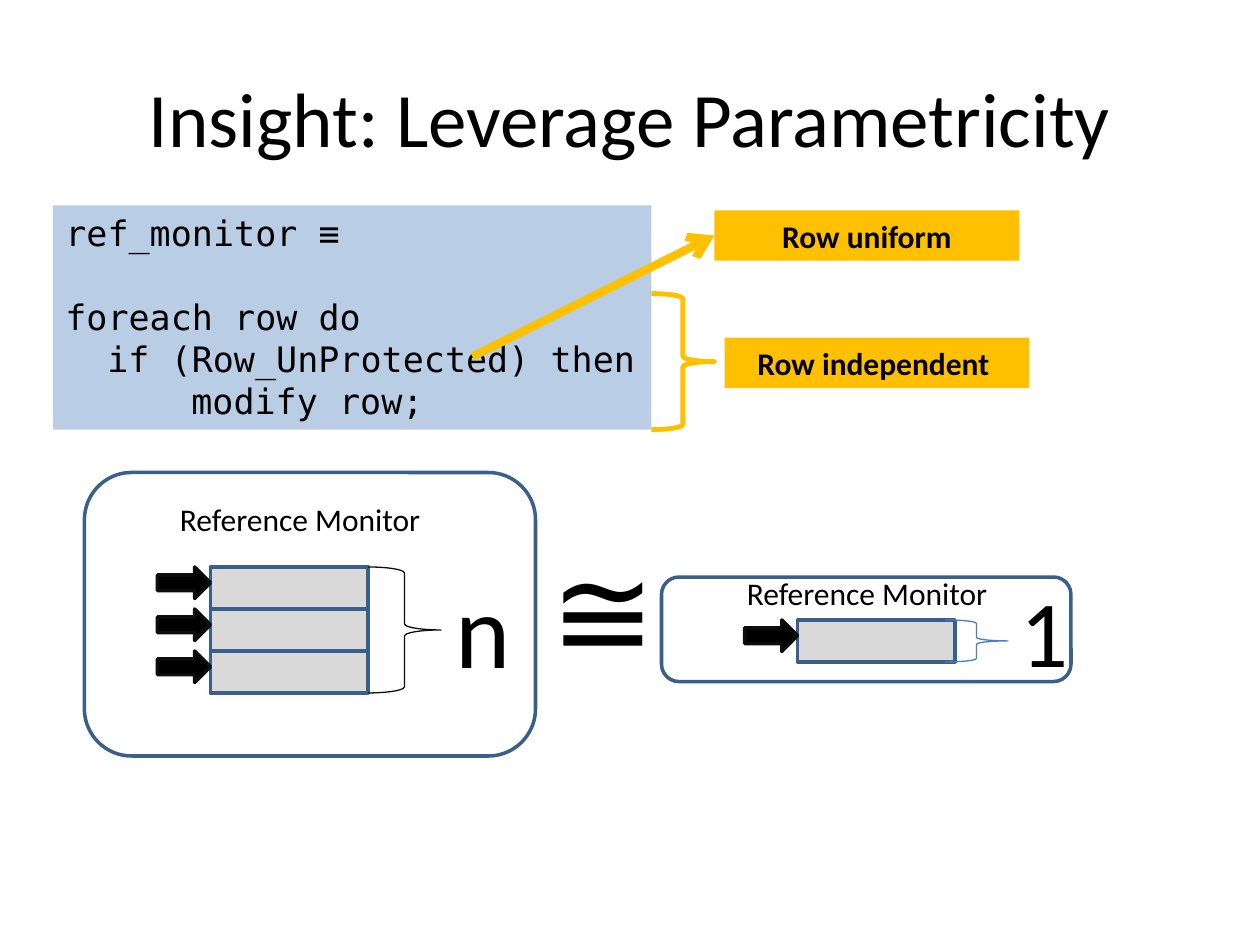
import pptx
import pptx.util
import pptx.dml.color
import pptx.enum.shapes
import pptx.enum.text
import pptx.oxml.ns
from lxml import etree

Inches = pptx.util.Inches
Pt = pptx.util.Pt
KIND = pptx.enum.shapes.MSO_SHAPE
ALIGN = pptx.enum.text.PP_ALIGN
ANCHOR = pptx.enum.text.MSO_ANCHOR
INK, EDGE, GOLD, GREY = "000000", "3A5F8C", "FFC000", "D9D9D9"
ROW = 1 / 3


def tint(code):
    """Turn a hex string into a colour."""
    return pptx.dml.color.RGBColor.from_string(code)


def shape(slide, kind, box, fill=None, line=None, width=2):
    """Add a preset shape with the given fill and outline."""
    item = slide.shapes.add_shape(kind, *map(Inches, box))
    item.shadow.inherit = False
    if fill:
        item.fill.solid()
        item.fill.fore_color.rgb = tint(fill)
    else:
        item.fill.background()
    if line:
        item.line.color.rgb = tint(line)
        item.line.width = Pt(width)
    else:
        item.line.fill.background()
    return item


def write(item, lines, size, name="Calibri", bold=False, align=ALIGN.CENTER, anchor=ANCHOR.TOP):
    """Fill an item with one paragraph per line."""
    frame = item.text_frame
    for key, value in {"word_wrap": True, "vertical_anchor": anchor}.items():
        setattr(frame, key, value)
    looks = {"name": name, "size": Pt(size), "bold": bold}
    for spot, line in enumerate(lines):
        para = frame.paragraphs[0] if spot == 0 else frame.add_paragraph()
        para.alignment = align
        run = para.add_run()
        run.text = line
        for key, value in looks.items():
            setattr(run.font, key, value)
        run.font.color.rgb = tint(INK)
    return frame


def label(slide, box, words, size, **form):
    """Add a text box with one line."""
    item = slide.shapes.add_textbox(*map(Inches, box))
    return write(item, [words], size, **form)


def code(slide, box):
    """Draw the code panel, indented by whole characters."""
    size = 20
    lines = ["ref_monitor ≡", "foreach row do", "if (Row_UnProtected) then", "modify row;"]
    item = shape(slide, KIND.RECTANGLE, box, fill="B9CDE5")
    frame = write(item, lines, size, name="DejaVu Sans Mono", align=ALIGN.LEFT)
    for para, chars in zip(frame.paragraphs, (0, 0, 2, 6)):
        props = para._p.get_or_add_pPr()
        props.set("marL", str(Pt(0.6 * size * chars)))
        props.set("indent", "0")
    frame.paragraphs[1].space_before = Pt(1.2 * size)


def badge(slide, left, top, words):
    """Draw a gold label."""
    item = shape(slide, KIND.RECTANGLE, (left, top, 2.42, 0.4), fill=GOLD)
    write(item, [words], 18, bold=True)
    return item


def notes(slide, left, top):
    """Draw the two gold remarks beside the code."""
    shape(slide, KIND.RIGHT_BRACE, (left, top + 0.7, 0.5, 1.08), line=GOLD, width=2.75)
    badge(slide, left + 0.58, top + 1.05, "Row independent ")
    goal = badge(slide, left + 0.5, top + 0.04, "Row uniform")
    ends = map(Inches, (left - 1.42, top + 1.2, left + 0.5, top + 0.24))
    link = slide.shapes.add_connector(pptx.enum.shapes.MSO_CONNECTOR.STRAIGHT, *ends)
    link.end_connect(goal, 1)
    link.line.color.rgb = tint(GOLD)
    link.line.width = Pt(4.75)
    tag = pptx.oxml.ns.qn
    etree.SubElement(link.line._get_or_add_ln(), tag("a:tailEnd"), type="arrow")
    etree.SubElement(link._element.spPr, tag("a:effectLst"))


def monitor(slide, box, title, rows, count, brace, hue, sign, size, words):
    """Draw a reference monitor; inner places are relative to its box."""
    left, top, _, _ = box

    def at(part):
        return left + part[0], top + part[1], part[2], part[3]

    x, y = at((*rows, 0, 0))[:2]
    for step in range(count):
        down = y + step * ROW
        shape(slide, KIND.RECTANGLE, (x, down, 1.25, ROW), GREY, EDGE)
        shape(slide, KIND.RIGHT_ARROW, (x - 0.42, down, 0.42, 0.25), INK, "0D0D0D")
    shape(slide, KIND.ROUNDED_RECTANGLE, box, line=EDGE)
    label(slide, at((*title, 2.25, 0.4)), "Reference Monitor", 18, align=ALIGN.LEFT)
    shape(slide, KIND.RIGHT_BRACE, at((*brace, count * ROW)), line=hue, width=0.75)
    label(slide, at(sign), words, size)


def main():
    """Build and save the slide."""
    deck = pptx.Presentation()
    deck.slide_width, deck.slide_height = Inches(10), Inches(7.5)
    slide = deck.slides.add_slide(deck.slide_layouts[6])
    label(slide, (0.5, 0.3, 9, 1.25), "Insight: Leverage Parametricity", 44, anchor=ANCHOR.MIDDLE)
    monitor(slide, (0.67, 3.75, 3.58, 2.25), title=(0.66, 0.17), rows=(1, 0.75), count=3,
            brace=(2.25, 0.75, 0.58), hue="0D0D0D", sign=(2.83, 0.67, 0.67, 1.11),
            size=60, words="n")
    label(slide, (4.25, 4.17, 1.08, 1.31), "≅", 72)
    monitor(slide, (5.25, 4.58, 3.25, 0.83), title=(0.58, -0.07), rows=(1.08, 0.34), count=1,
            brace=(2.25, 0.34, 0.5), hue="4B7EBC", sign=(2.75, -0.08, 0.5, 1),
            size=54, words="1")
    code(slide, (0.42, 1.63, 4.75, 1.78))
    notes(slide, 5.17, 1.63)
    deck.save("out.pptx")


if __name__ == "__main__":
    main()
